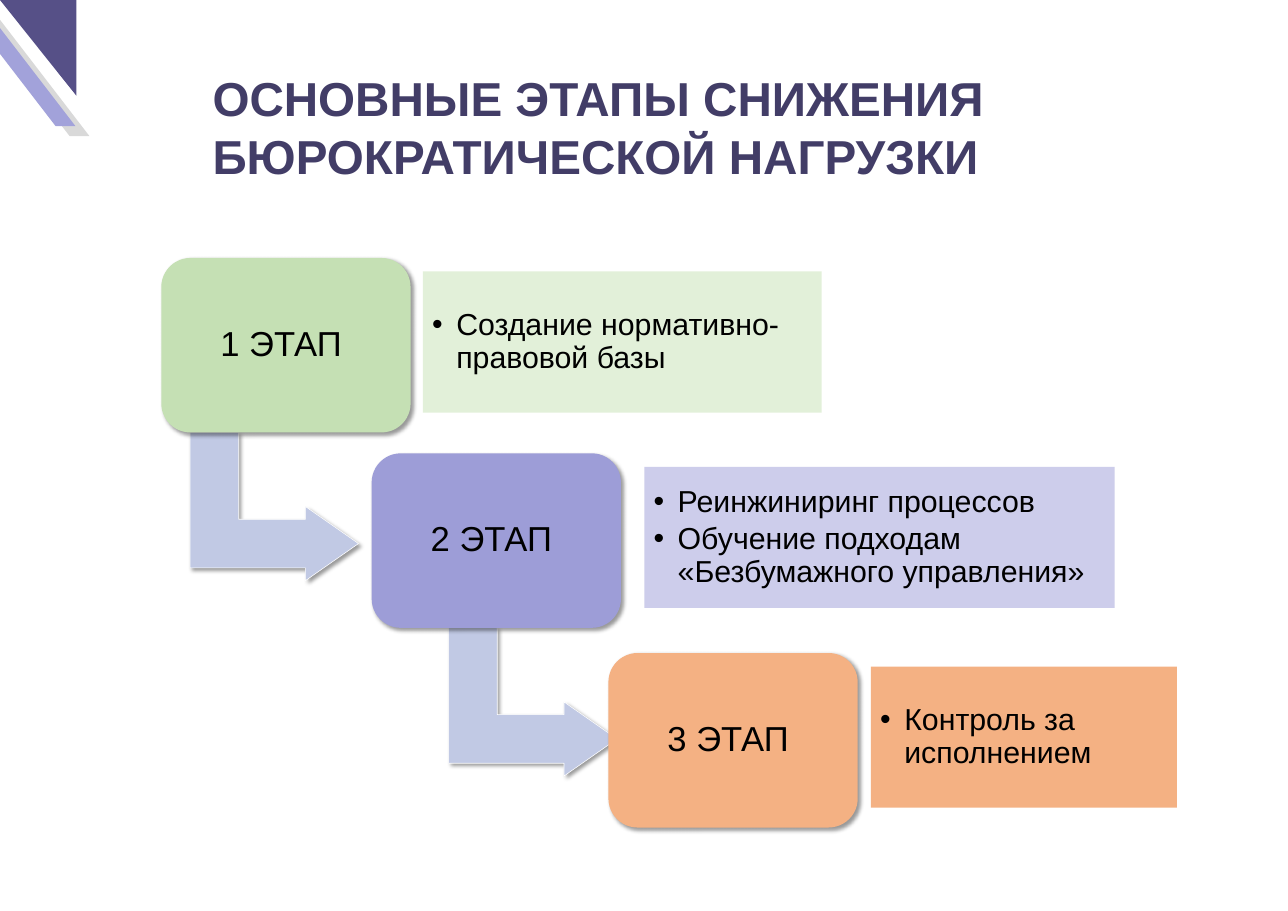
from lxml import etree
from pptx import Presentation
from pptx.dml.color import RGBColor
from pptx.enum.shapes import MSO_SHAPE
from pptx.enum.text import MSO_ANCHOR, MSO_AUTO_SIZE, PP_ALIGN
from pptx.oxml import parse_xml
from pptx.oxml.ns import nsdecls, qn
from pptx.util import Cm, Pt

ROUNDED, BENT_ARROW = MSO_SHAPE.ROUNDED_RECTANGLE, MSO_SHAPE.BENT_UP_ARROW
STRIPE, CORNER = MSO_SHAPE.PARALLELOGRAM, MSO_SHAPE.RIGHT_TRIANGLE
LEFT, CENTER = PP_ALIGN.LEFT, PP_ALIGN.CENTER
TOP, MIDDLE = MSO_ANCHOR.TOP, MSO_ANCHOR.MIDDLE
NO_AUTOFIT = MSO_AUTO_SIZE.NONE

FONT = "Arial"
TITLE = "ОСНОВНЫЕ ЭТАПЫ СНИЖЕНИЯ БЮРОКРАТИЧЕСКОЙ НАГРУЗКИ"
STAGES = [
    {"name": "1 ЭТАП ", "at": (5.26, 8.41), "fill": "C5E0B4", "arrow_shift": 1.27,
     "list_left": 13.79, "list_width": 13.0, "list_fill": "E2F0D9",
     "items": ["Создание нормативно-правовой базы"]},
    {"name": "2 ЭТАП ", "at": (12.12, 14.78), "fill": "9D9DD7", "arrow_shift": 2.84,
     "list_left": 21.01, "list_width": 15.34, "list_fill": "CDCDEB",
     "items": ["Реинжиниринг процессов", "Обучение подходам «Безбумажного управления»"]},
    {"name": "3 ЭТАП ", "at": (19.84, 21.29), "fill": "F4B183", "arrow_shift": None,
     "list_left": 28.4, "list_width": 9.98, "list_fill": "F4B183",
     "items": ["Контроль за исполнением"]},
]
STAGE_SIZE = (8.13, 5.69)
ARROW_SIZE = (4.83, 5.49)
ARROW_DROP = 5.36
LIST_DROP, LIST_HEIGHT = 0.44, 4.6
STRIPES = [(-0.89, 0.33, "D9D9D9"), (-1.35, 0, "A2A2DA")]
STRIPE_SIZE = (3.81, 4.11)


def color(hex_string):
    return RGBColor.from_string(hex_string)


def paint(shape, fill):
    shape.fill.solid()
    shape.fill.fore_color.rgb = color(fill)


def add_block(kind, left, top, size, fill, adjustments=()):
    """Add a filled preset shape without line or shadow."""
    shape = slide.shapes.add_shape(kind, Cm(left), Cm(top), *map(Cm, size))
    shape.shadow.inherit = False
    paint(shape, fill)
    shape.line.fill.background()
    for index, value in enumerate(adjustments):
        shape.adjustments[index] = value
    return shape


def add_shadow(shape):
    effects = shape._element.spPr.find(qn("a:effectLst"))
    effects.append(parse_xml(
        f'<a:outerShdw {nsdecls("a")} blurRad="{Pt(4)}" dist="{Pt(3)}" dir="2700000"'
        ' algn="ctr" rotWithShape="0">'
        '<a:srgbClr val="000000"><a:alpha val="40000"/></a:srgbClr></a:outerShdw>'))


def place(box, left, top, width, height):
    box.left, box.top, box.width, box.height = map(Cm, (left, top, width, height))


def set_frame(box, anchor, inset):
    frame = box.text_frame
    frame.word_wrap = True
    frame.auto_size = NO_AUTOFIT
    frame.vertical_anchor = anchor
    frame.margin_left = frame.margin_right = Cm(inset)
    frame.margin_top = frame.margin_bottom = Cm(inset)
    return frame


def write(para, text, size, ink="000000", bold=False, align=LEFT, spacing=0.9):
    para.alignment = align
    para.line_spacing = spacing
    para.space_before = Pt(0)
    span = para.add_run()
    span.text = text
    span.font.name = FONT
    span.font.size = Pt(size)
    span.font.bold = bold
    span.font.color.rgb = color(ink)


def add_bullet(para):
    properties = para._p.get_or_add_pPr()
    properties.set("marL", str(Cm(0.79)))
    properties.set("indent", str(Cm(-0.79)))
    etree.SubElement(properties, qn("a:buFont")).set("typeface", FONT)
    etree.SubElement(properties, qn("a:buChar")).set("char", "•")


def fill_list(box, stage):
    place(box, stage["list_left"], stage["at"][1] + LIST_DROP,
          stage["list_width"], LIST_HEIGHT)
    paint(box, stage["list_fill"])
    frame = set_frame(box, MIDDLE, 0.3)
    for index, item in enumerate(stage["items"]):
        para = frame.add_paragraph() if index else frame.paragraphs[0]
        add_bullet(para)
        write(para, item, 28)
        para.space_after = Pt(4.2)


def add_stage(stage):
    left, top = stage["at"]
    if stage["arrow_shift"] is not None:
        arrow = add_block(BENT_ARROW, left + stage["arrow_shift"], top + ARROW_DROP,
                          ARROW_SIZE, "C1C9E4", (0.328, 0.25, 0.358))
        arrow.rotation = 90
        arrow.line.color.rgb = color("FFFFFF")
        arrow.line.width = Pt(0.5)
        add_shadow(arrow)
    box = add_block(ROUNDED, left, top, STAGE_SIZE, stage["fill"], (0.167,))
    add_shadow(box)
    frame = set_frame(box, MIDDLE, 0.33)
    write(frame.paragraphs[0], stage["name"], 32, align=CENTER)


deck = Presentation()
deck.slide_width, deck.slide_height = Cm(42), Cm(29.7)
comparison_layout = deck.slide_layouts[4]
slide = deck.slides.add_slide(comparison_layout)

for left, top, fill in STRIPES:
    stripe = add_block(STRIPE, left, top, STRIPE_SIZE, fill, (0.83,))
    stripe._element.spPr.find(qn("a:xfrm")).set("flipH", "1")
add_block(CORNER, 0, 0, (2.49, 3.12), "565087").rotation = 180

title = slide.shapes.title
place(title, 6.73, 2.06, 29.85, 4.01)
title_frame = set_frame(title, TOP, 0.2)
write(title_frame.paragraphs[0], TITLE, 44, "423D67", bold=True, spacing=1.0)

bodies = [box for box in slide.placeholders if box.placeholder_format.idx in (1, 2, 3, 4)]
for box, stage in zip(bodies, STAGES):
    fill_list(box, stage)
    add_stage(stage)
for spare in bodies[len(STAGES):]:
    spare._element.getparent().remove(spare._element)

deck.save("out.pptx")
